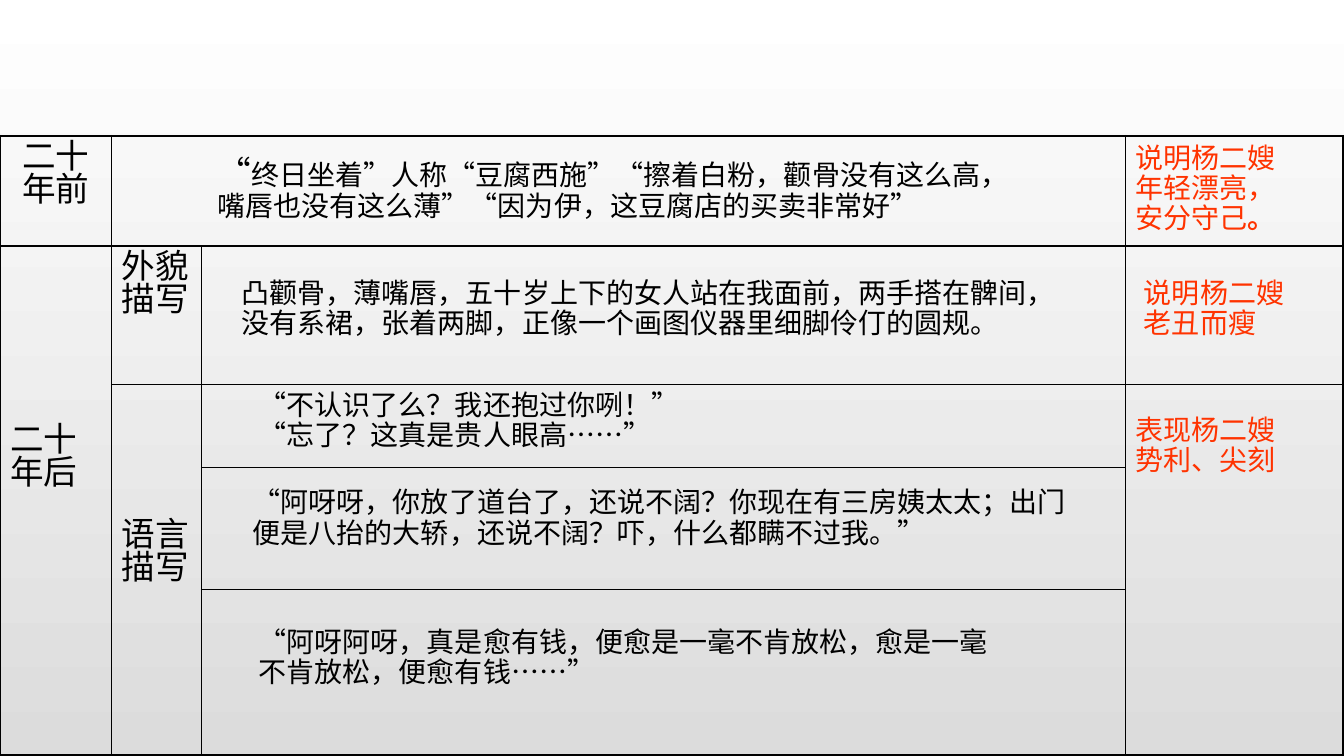
from itertools import groupby

from lxml import etree
from pptx import Presentation
from pptx import util as u
from pptx.dml.color import RGBColor
from pptx.enum import text
from pptx.oxml import ns

THEME = {
    "ink": RGBColor(0x00, 0x00, 0x00),
    "accent": RGBColor(0xFF, 0x33, 0x00),
    "back_top": RGBColor(0xFF, 0xFF, 0xFF),
    "back_bottom": RGBColor(0xDC, 0xDC, 0xDC),
    "label_size": 24,
    "body_size": 20,
    "label_font": "Arial",
    "body_font": "DejaVu Sans",
    "mark_font": "Noto Sans CJK SC",
    "inner_line": 1,
    "outer_line": 2.25,
}
MARKS = "“”…"


def add_span(para, words, size=THEME["body_size"], font=THEME["body_font"],
             color=THEME["ink"], bold=None):
    span = para.add_run()
    span.text = words
    span.font.size = u.Pt(size)
    span.font.name = font
    span.font.bold = bold
    span.font.color.rgb = color
    east_asian = etree.SubElement(span._r.get_or_add_rPr(), ns.qn("a:ea"))
    east_asian.set("typeface", font)
    return span


def write(para, words, space=10, align=None, **style):
    """Fill a paragraph; quotes and ellipses take the mark font."""
    para.line_spacing = 0.9
    para.space_before = u.Pt(space)
    para.alignment = align
    for is_mark, chars in groupby(words, key=lambda char: char in MARKS):
        font = {"font": THEME["mark_font"]} if is_mark else {}
        add_span(para, "".join(chars), **{**style, **font})


# Slide and background
deck = Presentation()
deck.slide_width, deck.slide_height = u.Cm(33.87), u.Cm(19.05)
page = deck.slides.add_slide(deck.slide_layouts[6])
back = page.background.fill
back.gradient()
back.gradient_angle = 270
for stop, name in zip(back.gradient_stops, ("back_top", "back_bottom")):
    stop.color.rgb = THEME[name]

# Table grid
widths = [2.82, 2.26, 23.29, 5.49]
heights = [2.77, 3.48, 2.11, 3.07, 4.18]
frame = page.shapes.add_table(len(heights), len(widths), u.Cm(0), u.Cm(3.43),
                              u.Cm(sum(widths)), u.Cm(sum(heights)))
table = frame.table
table.first_row = table.horz_banding = False
for column, width in zip(table.columns, widths):
    column.width = u.Cm(width)
for row, height in zip(table.rows, heights):
    row.height = u.Cm(height)
for start, end in [((0, 1), (0, 2)), ((1, 0), (4, 0)),
                   ((2, 1), (4, 1)), ((2, 3), (4, 3))]:
    table.cell(*start).merge(table.cell(*end))

# Cell borders: heavy around the table, thin inside
for r in range(len(heights)):
    for c in range(len(widths)):
        cell = table.cell(r, c)
        outer = {
            "a:lnL": c == 0,
            "a:lnR": c + cell.span_width == len(widths),
            "a:lnT": r == 0,
            "a:lnB": r + cell.span_height == len(heights),
        }
        props = cell._tc.get_or_add_tcPr()
        for tag, heavy in outer.items():
            weight = THEME["outer_line" if heavy else "inner_line"]
            line = etree.SubElement(props, ns.qn(tag), w=str(u.Pt(weight)))
            fill = etree.SubElement(line, ns.qn("a:solidFill"))
            etree.SubElement(fill, ns.qn("a:srgbClr"), val=str(THEME["ink"]))
        cell.fill.background()

# Row labels, lowered inside the tall cells by their top margin
labels = [
    (0, 0, "二十年前", 0.13, text.PP_ALIGN.CENTER),
    (1, 0, "二十年后", 4.49, None),
    (1, 1, "外貌描写", 0.13, None),
    (2, 1, "语言描写", 3.4, None),
]
for r, c, words, margin, align in labels:
    cell = table.cell(r, c)
    cell.margin_top = u.Cm(margin)
    write(cell.text_frame.paragraphs[0], words, align=align,
          size=THEME["label_size"], font=THEME["label_font"])

# Quotations and comments laid over the table
red = {"color": THEME["accent"]}
notes = [
    (5.23, 3.81, 20.8, 1.93,
     ["终日坐着”人称“豆腐西施”“擦着白粉，颧骨没有这么高，嘴唇也没有这么薄”"
      "“因为伊，这豆腐店的买卖非常好”"], {"lead": "“"}),
    (5.84, 6.91, 20.68, 1.8,
     ["凸颧骨，薄嘴唇，五十岁上下的女人站在我面前，两手搭在髀间，没有系裙，"
      "张着两脚，正像一个画图仪器里细脚伶仃的圆规。"], {"font": THEME["mark_font"]}),
    (6.27, 9.73, 19.84, 1.78,
     ["“不认识了么？我还抱过你咧！”", "“忘了？这真是贵人眼高……”"], {"space": 0}),
    (6.12, 12.19, 21.06, 1.78,
     ["“阿呀呀，你放了道台了，还说不阔？你现在有三房姨太太；出门便是八抬的大轿，"
      "还说不阔？吓，什么都瞒不过我。”"], {}),
    (6.27, 15.7, 19.38, 1.78,
     ["“阿呀阿呀，真是愈有钱，便愈是一毫不肯放松，愈是一毫不肯放松，便愈有钱……”"], {}),
    (28.37, 3.51, 4.72, 2.54, ["说明杨二嫂年轻漂亮，安分守己"], {**red, "tail": "。"}),
    (28.58, 6.91, 4.27, 1.78, ["说明杨二嫂老丑而瘦"], red),
    (28.37, 10.36, 4.22, 1.78, ["表现杨二嫂势利、尖刻"], red),
]
for left, top, width, height, lines, style in notes:
    style = dict(style)
    lead, tail = style.pop("lead", ""), style.pop("tail", "")
    box = page.shapes.add_textbox(u.Cm(left), u.Cm(top), u.Cm(width), u.Cm(height))
    body = box.text_frame
    body.word_wrap = True
    body.auto_size = text.MSO_AUTO_SIZE.SHAPE_TO_FIT_TEXT
    for index, words in enumerate(lines):
        para = body.add_paragraph() if index else body.paragraphs[0]
        if lead:
            add_span(para, lead, size=THEME["label_size"], font=THEME["mark_font"])
        write(para, words, **style)
        if tail:
            add_span(para, tail, bold=True, **style)

deck.save("out.pptx")
